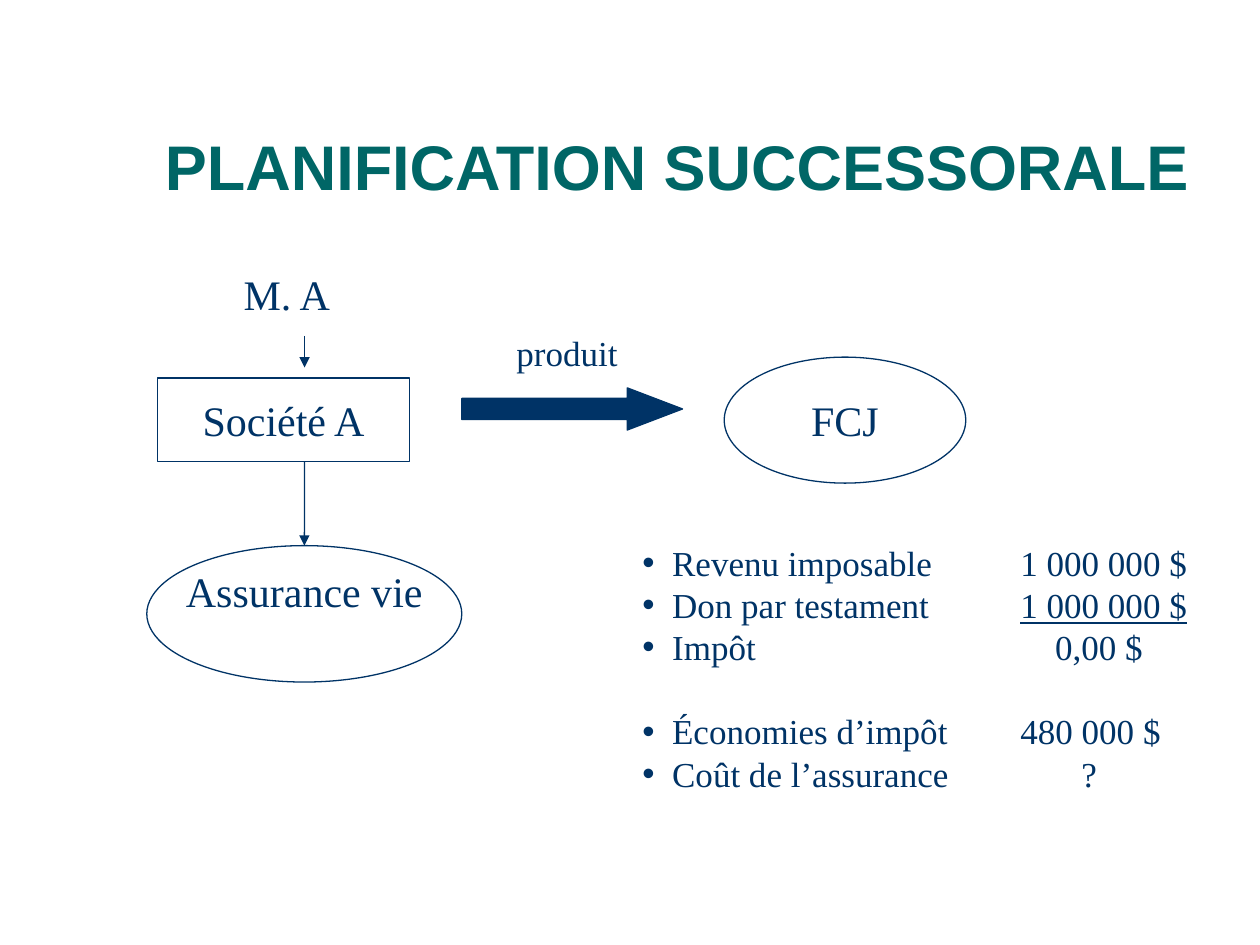
import pptx
import pptx.dml.color
import pptx.enum.shapes
import pptx.enum.text
import pptx.oxml
import pptx.oxml.ns
import pptx.util
from lxml import etree

Cm, Pt = pptx.util.Cm, pptx.util.Pt
SHAPE = pptx.enum.shapes.MSO_SHAPE
ANCHOR = pptx.enum.text.MSO_ANCHOR
ALIGN = pptx.enum.text.PP_ALIGN
COLORS = {"title": "006666", "ink": "003366"}
TITLE = {"name": "Arial", "size": Pt(36), "bold": True}
NODE = {"name": "Times New Roman", "size": Pt(24)}
LABEL = {"name": "Times New Roman", "size": Pt(20)}

# label, amount, tab stop (cm), underlined, space before (pt)
FIGURES = [
    ("Revenu imposable", "1 000 000 $", 7.62, False, 0),
    ("Don par testament", "1 000 000 $", 7.62, True, 0),
    ("Impôt", "0,00 $", 8.32, False, 0),
    ("Économies d’impôt", "480 000 $", 7.62, False, 24),
    ("Coût de l’assurance", "?", 8.85, False, 0),
]


def rgb(key):
    return pptx.dml.color.RGBColor.from_string(COLORS[key])


def add_run(p, text, fmt, color="ink"):
    r = p.add_run()
    r.text = text
    for name, value in fmt.items():
        setattr(r.font, name, value)
    r.font.color.rgb = rgb(color)
    return r


def set_line(obj):
    obj.line.color.rgb = rgb("ink")
    obj.line.width = Pt(0.75)


def add_title(s, text):
    sp = s.shapes.title
    sp.left, sp.top, sp.width, sp.height = Cm(2.54), Cm(2.12), Cm(22.22), Cm(2.12)
    tf = sp.text_frame
    tf.auto_size = pptx.enum.text.MSO_AUTO_SIZE.NONE
    tf.vertical_anchor = ANCHOR.BOTTOM
    p = tf.paragraphs[0]
    p.alignment = ALIGN.CENTER
    p.line_spacing = 0.9
    add_run(p, text, TITLE, "title")


def add_node(s, kind, box, text="", filled=False):
    sp = s.shapes.add_shape(kind, *map(Cm, box))
    sp.shadow.inherit = False
    set_line(sp)
    if filled:
        sp.fill.solid()
        sp.fill.fore_color.rgb = rgb("ink")
    else:
        sp.fill.background()
    if text:
        tf = sp.text_frame
        tf.word_wrap = False
        tf.vertical_anchor = ANCHOR.MIDDLE
        p = tf.paragraphs[0]
        p.alignment = ALIGN.CENTER
        add_run(p, text, NODE)
    return sp


def add_text(s, box, text="", fmt=LABEL):
    tf = s.shapes.add_textbox(*map(Cm, box)).text_frame
    tf.word_wrap = True
    if text:
        add_run(tf.paragraphs[0], text, fmt)
    return tf


def add_arrow(s, x, y1, y2):
    c = s.shapes.add_connector(
        pptx.enum.shapes.MSO_CONNECTOR.STRAIGHT, Cm(x), Cm(y1), Cm(x), Cm(y2))
    set_line(c)
    qn = pptx.oxml.ns.qn
    etree.SubElement(c.line._get_or_add_ln(), qn("a:tailEnd"), type="triangle")
    etree.SubElement(c._element.spPr, qn("a:effectLst"))
    return c


def format_bullet(p, tab):
    qn = pptx.oxml.ns.qn
    pPr = p._p.get_or_add_pPr()
    pPr.set("marL", str(Cm(0.6)))
    pPr.set("indent", str(-Cm(0.6)))
    etree.SubElement(pPr, qn("a:buFont"), typeface="Arial")
    etree.SubElement(pPr, qn("a:buChar"), char="•")
    tabs = etree.SubElement(pPr, qn("a:tabLst"))
    etree.SubElement(tabs, qn("a:tab"), pos=str(Cm(tab)), algn="l")


def add_figures(s, box, rows):
    tf = add_text(s, box)
    for i, (label, amount, tab, underline, before) in enumerate(rows):
        p = tf.add_paragraph() if i else tf.paragraphs[0]
        format_bullet(p, tab)
        p.line_spacing = Pt(24)
        p.space_before = Pt(before)
        add_run(p, label + "\t", LABEL)
        r = add_run(p, amount, LABEL)
        if underline:
            r.font.underline = True


def main():
    prs = pptx.Presentation()
    prs.slide_width, prs.slide_height = Cm(25.4), Cm(19.05)
    s = prs.slides.add_slide(prs.slide_layouts[5])
    add_title(s, "PLANIFICATION SUCCESSORALE")

    # Company, insurance and foundation
    add_node(s, SHAPE.FLOWCHART_PROCESS, (3.18, 7.62, 5.08, 1.69), "Société A")
    insurance = add_node(s, SHAPE.OVAL, (2.96, 11, 6.35, 2.75), "Assurance vie")
    insurance.text_frame.vertical_anchor = ANCHOR.TOP
    insurance.text_frame.margin_top = 0
    add_node(s, SHAPE.OVAL, (14.6, 7.2, 4.87, 2.54), "FCJ")

    # Flow between them
    product = add_node(s, SHAPE.RIGHT_ARROW, (9.31, 7.82, 4.45, 0.85), filled=True)
    product.adjustments[1] = 1.31
    add_arrow(s, 6.14, 6.77, 7.41)
    add_arrow(s, 6.14, 9.31, 11).end_connect(insurance, 0)
    add_text(s, (10.16, 6.56, 3.73, 1.1), "produit")
    add_text(s, (4.66, 5.29, 4.45, 1.27), "M. A", NODE)

    # Tax figures
    add_figures(s, (12.7, 10.8, 14.65, 5.33), FIGURES)
    prs.save("out.pptx")


if __name__ == "__main__":
    main()
